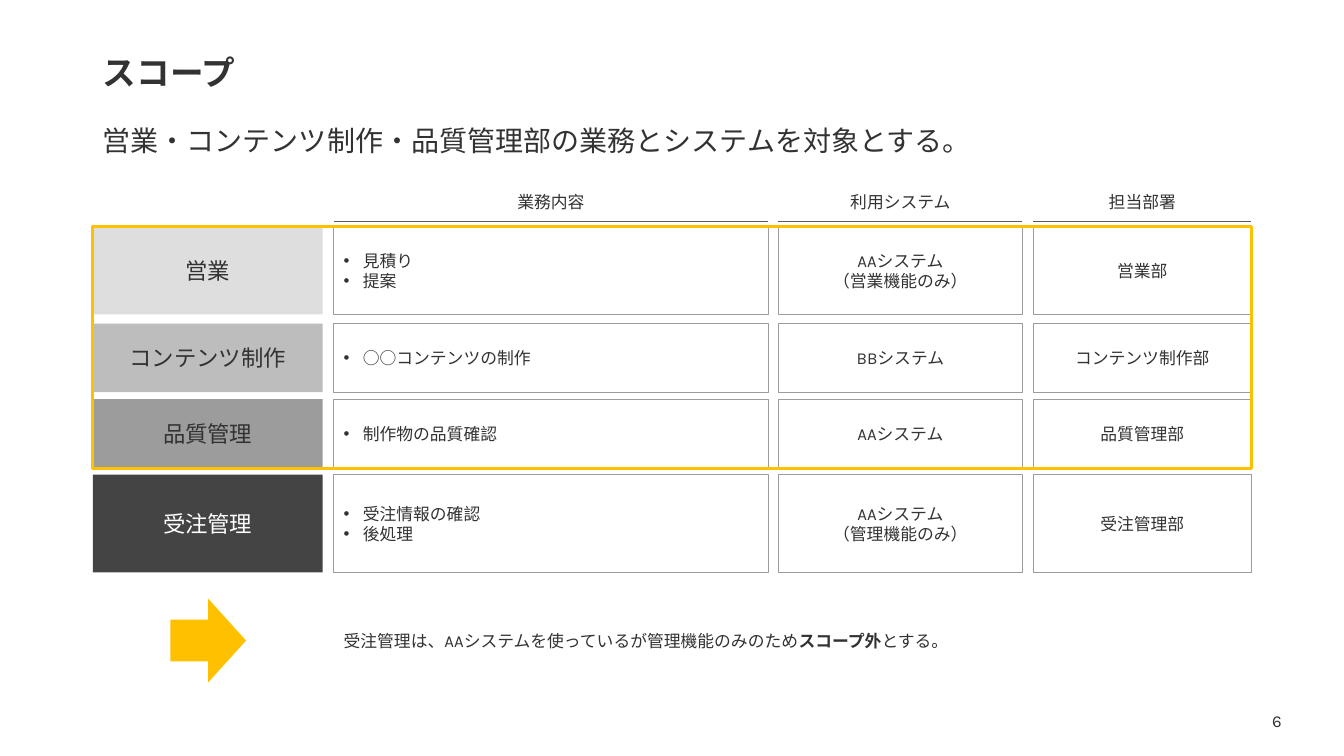
from lxml import etree
from pptx import Presentation
from pptx.dml.color import RGBColor
from pptx.enum.shapes import MSO_CONNECTOR, MSO_SHAPE
from pptx.enum.text import MSO_ANCHOR, MSO_AUTO_SIZE, PP_ALIGN
from pptx.oxml.ns import qn
from pptx.util import Inches, Pt

RECTANGLE, RIGHT_ARROW = MSO_SHAPE.RECTANGLE, MSO_SHAPE.RIGHT_ARROW
STRAIGHT = MSO_CONNECTOR.STRAIGHT
MIDDLE, NO_FIT = MSO_ANCHOR.MIDDLE, MSO_AUTO_SIZE.NONE
LEFT, CENTER = PP_ALIGN.LEFT, PP_ALIGN.CENTER

FONT = "Karla"
INK, WHITE, BORDER, RULE, ACCENT = "323232", "FFFFFF", "9C9C9C", "5A5A5A", "FFC000"
BULLET_INDENT = 0.19

LABEL_COLUMN = (0.92, 2.28)  # left, width
COLUMNS = [("業務内容", 3.31, 4.31), ("利用システム", 7.72, 2.42), ("担当部署", 10.25, 2.16)]
# top, height, label, label fill, label colour, tasks, system lines, department
ROWS = [
    (2.25, 0.87, "営業", "DEDEDE", INK,
     ["見積り", "提案"], ["AAシステム", "（営業機能のみ）"], "営業部"),
    (3.21, 0.68, "コンテンツ制作", "BDBDBD", INK,
     ["○○コンテンツの制作"], ["BBシステム"], "コンテンツ制作部"),
    (3.96, 0.68, "品質管理", "9C9C9C", INK,
     ["制作物の品質確認"], ["AAシステム"], "品質管理部"),
    (4.71, 0.97, "受注管理", "444444", WHITE,
     ["受注情報の確認", "後処理"], ["AAシステム", "（管理機能のみ）"], "受注管理部"),
]


def rgb(color):
    return RGBColor.from_string(color)


def add_span(para, text, size, color=INK, bold=False):
    span = para.add_run()
    span.text = text
    span.font.name = FONT
    span.font.size = Pt(size)
    span.font.bold = bold
    span.font.color.rgb = rgb(color)


def prepare_frame(shape, align):
    """Set wrapping and anchoring, and return the first paragraph."""
    frame = shape.text_frame
    frame.word_wrap = True
    frame.auto_size = NO_FIT
    frame.vertical_anchor = MIDDLE
    para = frame.paragraphs[0]
    para.alignment = align
    return para


def add_text(page, box, align):
    """Add an empty text box and return its first paragraph."""
    return prepare_frame(page.shapes.add_textbox(*map(Inches, box)), align)


def add_box(page, box, preset=RECTANGLE, fill=None, line=None, weight=0.5):
    shape = page.shapes.add_shape(preset, *map(Inches, box))
    shape.shadow.inherit = False
    if fill:
        shape.fill.solid()
        shape.fill.fore_color.rgb = rgb(fill)
    else:
        shape.fill.background()
    if line:
        shape.line.color.rgb = rgb(line)
        shape.line.width = Pt(weight)
    else:
        shape.line.fill.background()
    return shape


def add_bullet(para):
    properties = para._p.get_or_add_pPr()
    properties.set("marL", str(Inches(BULLET_INDENT)))
    properties.set("indent", str(-Inches(BULLET_INDENT)))
    etree.SubElement(properties, qn("a:buFont")).set("typeface", "Arial")
    etree.SubElement(properties, qn("a:buChar")).set("char", "•")


def add_headings(page, box):
    title = page.shapes.title
    left, top, width, height = box
    title.left, title.top, title.width, title.height = map(Inches, box)
    para = prepare_frame(title, LEFT)
    para.line_spacing = 0.9
    add_span(para, "スコープ", 24, bold=True)

    para = add_text(page, (left, top + 0.68, width, height), LEFT)
    para.line_spacing = 0.9
    add_span(para, "営業・コンテンツ制作・品質管理部の業務とシステムを対象とする。", 20)


def add_column_header(page, text, box):
    left, top, width, height = box
    add_span(add_text(page, box, CENTER), text, 12)
    rule_y = top + height + 0.05
    rule = page.shapes.add_connector(
        STRAIGHT, *map(Inches, (left, rule_y, left + width, rule_y)))
    rule.line.color.rgb = rgb(RULE)
    rule.line.width = Pt(0.5)
    etree.SubElement(rule._element.spPr, qn("a:effectLst"))


def add_task_cell(page, box, tasks):
    cell = add_box(page, box, line=BORDER)
    para = prepare_frame(cell, LEFT)
    for index, task in enumerate(tasks):
        if index:
            para = cell.text_frame.add_paragraph()
            para.alignment = LEFT
        add_bullet(para)
        add_span(para, task, 12)


def add_centred_cell(page, box, lines, size=12, color=INK, fill=None, line=BORDER):
    para = prepare_frame(add_box(page, box, fill=fill, line=line), CENTER)
    for index, text in enumerate(lines):
        if index:
            para.add_line_break()
        add_span(para, text, size, color)


def add_scope_row(page, row):
    top, height, label, fill, color, tasks, system, department = row
    label_left, label_width = LABEL_COLUMN
    add_centred_cell(page, (label_left, top, label_width, height), [label],
                     16, color, fill, line=None)
    task_box, system_box, department_box = [
        (left, top, width, height) for _, left, width in COLUMNS]
    add_task_cell(page, task_box, tasks)
    add_centred_cell(page, system_box, system)
    add_centred_cell(page, department_box, [department])


def add_conclusion(page, box):
    left, top, width, height = box
    arrow_height = 0.83
    add_box(page, (left - 1.62, top + (height - arrow_height) / 2, 0.75, arrow_height),
            RIGHT_ARROW, fill=ACCENT)
    para = add_text(page, box, LEFT)
    add_span(para, "受注管理は、AAシステムを使っているが管理機能のみのため", 12)
    add_span(para, "スコープ外", 12, bold=True)
    add_span(para, "とする。", 12)


def main():
    deck = Presentation()
    deck.slide_width, deck.slide_height = Inches(13.33), Inches(7.5)
    page = deck.slides.add_slide(deck.slide_layouts[5])
    add_headings(page, (0.92, 0.4, 11.5, 0.67))
    for text, left, width in COLUMNS:
        add_column_header(page, text, (left, 1.85, width, 0.3))
    for row in ROWS:
        add_scope_row(page, row)
    add_box(page, (0.92, 2.25, 11.49, 2.4), line=ACCENT, weight=2.25)
    add_conclusion(page, (3.31, 5.87, 9.11, 0.97))
    add_span(add_text(page, (12.42, 6.95, 0.49, 0.4), CENTER), "6", 12)
    deck.save("out.pptx")


if __name__ == "__main__":
    main()
